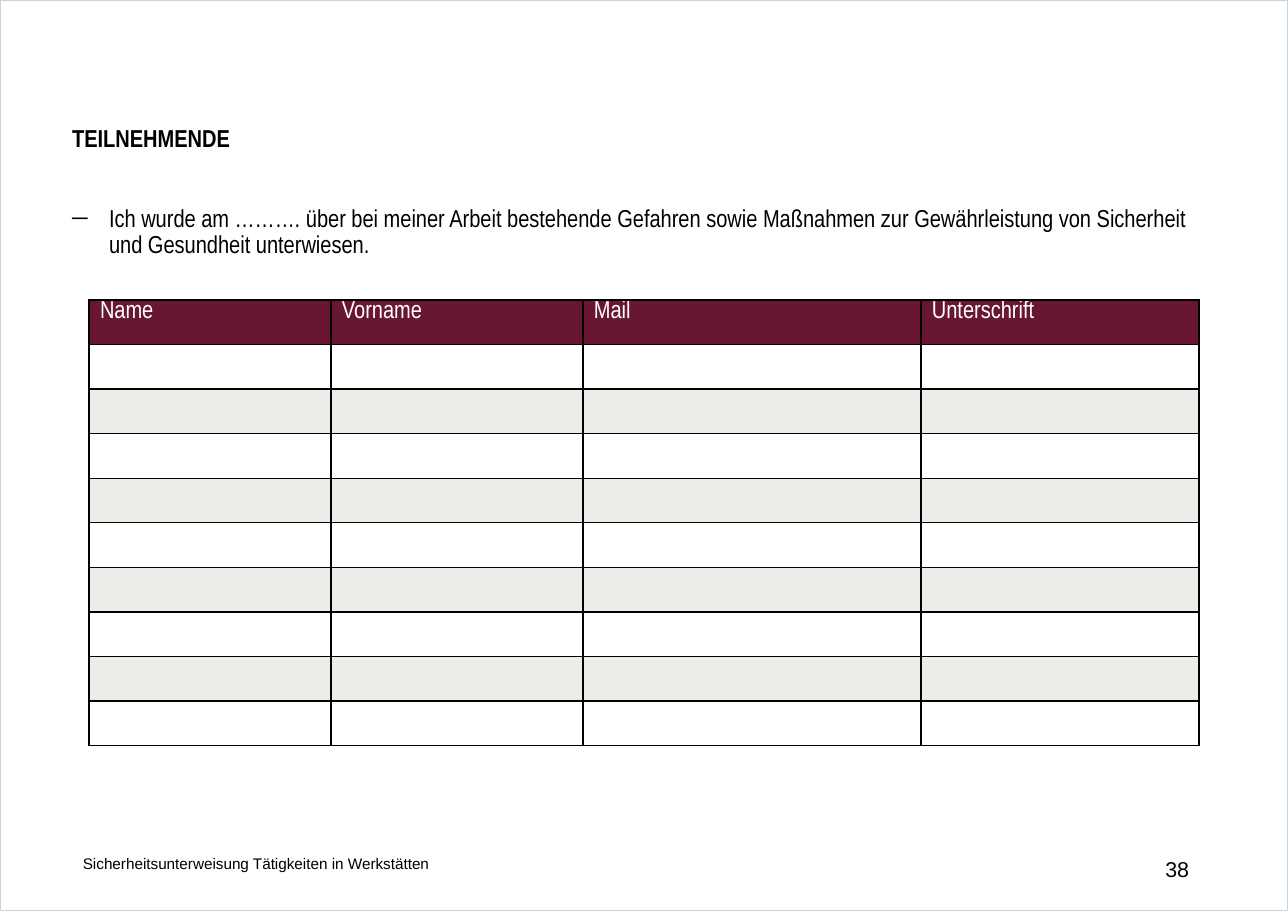
"""Build the sign-in sheet slide of a workshop safety briefing."""
from dataclasses import dataclass

from lxml import etree
from pptx import Presentation, util as u
from pptx.dml.color import RGBColor
from pptx.enum import shapes, text
from pptx.oxml import ns

PX = 914400 / 110.2


def px(n):
    """Turn pixels into EMU."""
    return u.Emu(round(n * PX))


@dataclass(frozen=True)
class Theme:
    """Colours, fonts and type sizes of the slide."""
    ink: str = "000000"
    paper: str = "FFFFFF"
    head: str = "691633"
    band: str = "EEECE8"
    frame: str = "C9D2D5"
    narrow: str = "Arial Narrow"
    plain: str = "Arial"
    main: int = 16
    number: int = 14
    footer: int = 10


def write(tf, words, size, font, color, bold=False, align=text.PP_ALIGN.LEFT, spacing=1.0):
    """Write one formatted paragraph into a text frame and return it."""
    p = tf.paragraphs[0]
    p.alignment, p.line_spacing, p.space_before = align, spacing, u.Pt(0)
    r = p.add_run()
    r.text = words
    r.font.size, r.font.name, r.font.bold = u.Pt(size), font, bold
    r.font.color.rgb = RGBColor.from_string(color)
    return p


class Sheet:
    """Draw styled elements on the current slide."""

    def __init__(self, s, theme):
        """Keep the slide and its theme."""
        self.s, self.t = s, theme

    def frame(self, w, h):
        """Draw the thin outline around the slide."""
        sp = self.s.shapes.add_shape(shapes.MSO_SHAPE.RECTANGLE, 0, 0, px(w), px(h))
        sp.shadow.inherit = False
        sp.fill.background()
        sp.line.color.rgb = RGBColor.from_string(self.t.frame)
        sp.line.width = u.Pt(1)

    def placeholder(self, sp, box, words, bold=False):
        """Move a placeholder and fill it with narrow text."""
        sp.left, sp.top, sp.width, sp.height = map(px, box)
        tf = sp.text_frame
        tf.margin_left = tf.margin_right = tf.margin_top = tf.margin_bottom = 0
        tf.auto_size, tf.word_wrap = text.MSO_AUTO_SIZE.NONE, True
        tf.vertical_anchor = text.MSO_ANCHOR.TOP
        return write(tf, words, self.t.main, self.t.narrow, self.t.ink, bold=bold, spacing=0.9)

    def title(self, box, words):
        """Fill the title."""
        self.placeholder(self.s.shapes.title, box, words, bold=True)

    def bullet(self, box, words, indent):
        """Fill the body with one dashed list item."""
        p = self.placeholder(self.s.placeholders[1], box, words)
        pPr = p._p.get_or_add_pPr()
        pPr.set("marL", str(px(indent)))
        pPr.set("indent", str(-px(indent)))
        etree.SubElement(pPr, ns.qn("a:buSzPct"), val="90000")
        etree.SubElement(pPr, ns.qn("a:buFont"), typeface=self.t.plain)
        etree.SubElement(pPr, ns.qn("a:buChar"), char="─")

    def label(self, box, words, size, align=text.PP_ALIGN.LEFT):
        """Add a vertically centred text box."""
        tf = self.s.shapes.add_textbox(*map(px, box)).text_frame
        tf.word_wrap, tf.vertical_anchor = True, text.MSO_ANCHOR.MIDDLE
        write(tf, words, size, self.t.plain, self.t.ink, align=align)

    def borders(self, cell):
        """Draw a thin line on all four sides of a cell."""
        tcPr = cell._tc.get_or_add_tcPr()
        for side in ("lnL", "lnR", "lnT", "lnB"):
            ln = etree.SubElement(tcPr, ns.qn(f"a:{side}"), w=str(u.Pt(1)))
            fill = etree.SubElement(ln, ns.qn("a:solidFill"))
            etree.SubElement(fill, ns.qn("a:srgbClr"), val=self.t.ink)

    def table(self, left, top, height, columns, rows):
        """Add a table with a header and empty banded rows."""
        width = sum(columns.values())
        tbl = self.s.shapes.add_table(rows, len(columns), px(left), px(top), px(width), px(height)).table
        for row in tbl.rows:
            row.height = px(height / rows)
        for c, (name, w) in enumerate(columns.items()):
            tbl.columns[c].width = px(w)
            for r in range(rows):
                cell = tbl.cell(r, c)
                cell.margin_top = cell.margin_bottom = px(2)
                self.borders(cell)
                color = self.t.head if r == 0 else (self.t.band, self.t.paper)[r % 2]
                cell.fill.solid()
                cell.fill.fore_color.rgb = RGBColor.from_string(color)
            write(tbl.cell(0, c).text_frame, name, self.t.main, self.t.narrow, self.t.paper, spacing=0.9)


def main():
    """Build and save the slide."""
    prs = Presentation()
    prs.slide_width, prs.slide_height = px(1288), px(911)
    theme = Theme()
    sheet = Sheet(prs.slides.add_slide(prs.slide_layouts[1]), theme)
    sheet.frame(1288, 911)
    sheet.title((72, 126, 1145, 30), "TEILNEHMENDE")
    sheet.bullet(
        (72, 206, 1145, 64),
        "Ich wurde am ………. über bei meiner Arbeit bestehende Gefahren sowie Maßnahmen "
        "zur Gewährleistung von Sicherheit und Gesundheit unterwiesen.",
        indent=37,
    )
    columns = {"Name": 242, "Vorname": 252, "Mail": 338, "Unterschrift": 278}
    sheet.table(89, 300, 446, columns, rows=10)
    sheet.label((72, 844, 774, 39), "Sicherheitsunterweisung Tätigkeiten in Werkstätten", theme.footer)
    sheet.label((910, 844, 290, 49), "38", theme.number, align=text.PP_ALIGN.RIGHT)
    prs.save("out.pptx")


if __name__ == "__main__":
    main()
